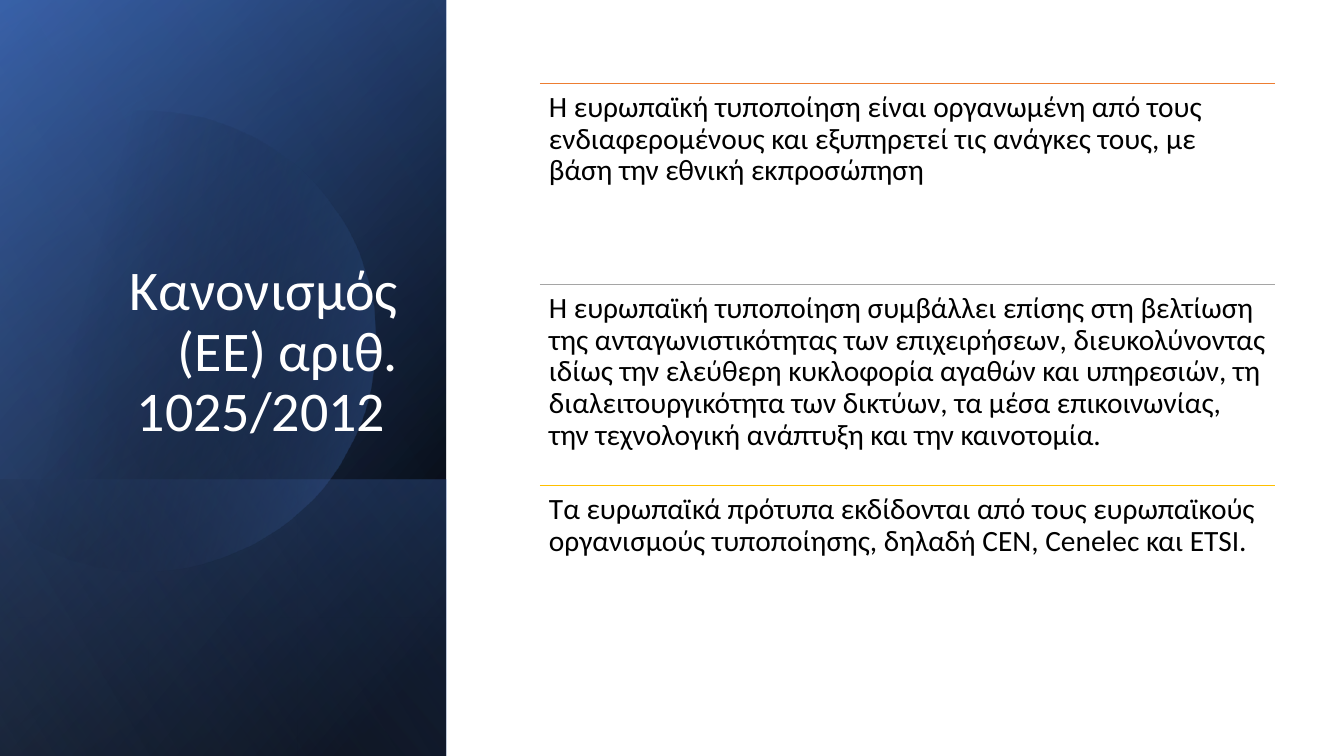
from lxml import etree
from pptx import Presentation
from pptx import util as u
from pptx.dml.color import RGBColor
from pptx.enum import shapes, text
from pptx.oxml.ns import qn

SCALE = 914400 / 100.8  # EMU in one px
WIDE, HIGH, SIDE = 1344, 756, 446

# Each stop: position %, colour, opacity %
PANELS = [
    (0, HIGH, 50, [(8, "000000", 100), (100, "2F5597", 100)]),
    (0, HIGH, 30, [(0, "000000", 0), (99, "4472C4", 46)]),
    (480, HIGH - 480, 130, [(2, "4472C4", 29), (100, "000000", 30)]),
]
SHEEN = (0, HIGH, 120, [(0, "000000", 0), (99, "8FAADC", 11)])
DISC = [(29, "000000", 0), (100, "4472C4", 43)]

# Disc outline: cubic curves, each from the end of the one before
START = (150, 111)
RIGHT = [
    [(248, 113), (338, 178), (366, 277)],
    [(401, 400), (331, 527), (209, 562)],
    [(132, 585), (53, 566), (-3, 518)],
]
EDGE = [(-15, 507), (-15, 176), (0, 162)]
LEFT = [
    [(23, 143), (50, 129), (81, 120)],
    [(104, 114), (127, 111), START],
]

TITLE = "Κανονισμός (ΕΕ) αριθ. 1025/2012 "
ROWS = [
    ("ED7D31", "Η ευρωπαϊκή τυποποίηση είναι οργανωμένη από τους "
     "ενδιαφερομένους και εξυπηρετεί τις ανάγκες τους, με βάση την εθνική "
     "εκπροσώπηση"),
    ("A5A5A5", "Η ευρωπαϊκή τυποποίηση συμβάλλει επίσης στη βελτίωση της "
     "ανταγωνιστικότητας των επιχειρήσεων, διευκολύνοντας ιδίως την ελεύθερη "
     "κυκλοφορία αγαθών και υπηρεσιών, τη διαλειτουργικότητα των δικτύων, τα "
     "μέσα επικοινωνίας, την τεχνολογική ανάπτυξη και την καινοτομία."),
    ("FFC000", "Τα ευρωπαϊκά πρότυπα εκδίδονται από τους ευρωπαϊκούς "
     "οργανισμούς τυποποίησης, δηλαδή CEN, Cenelec και ETSI."),
]


def px(n):
    return u.Emu(round(n * SCALE))


def color(code):
    return RGBColor.from_string(code)


def shade(shape, stops, angle):
    """Give a shape a linear gradient, with opacity, and no line."""
    shape.shadow.inherit = False
    shape.line.fill.background()
    shape.fill.gradient()
    grad = shape._element.spPr.find(qn("a:gradFill"))
    for child in list(grad):
        grad.remove(child)
    grad.set("rotWithShape", "1")
    group = etree.SubElement(grad, qn("a:gsLst"))
    for pos, code, alpha in stops:
        stop = etree.SubElement(group, qn("a:gs"), pos=str(pos * 1000))
        tint = etree.SubElement(stop, qn("a:srgbClr"), val=code)
        etree.SubElement(tint, qn("a:alpha"), val=str(alpha * 1000))
    etree.SubElement(grad, qn("a:lin"), ang=str(angle * 60000), scaled="0")


def panel(slide, top, high, angle, stops):
    """Add a side panel, turned a quarter and mirrored."""
    left = (SIDE - high) / 2
    mid = top + (high - SIDE) / 2
    shape = slide.shapes.add_shape(shapes.MSO_SHAPE.RECTANGLE, px(left),
                                   px(mid), px(high), px(SIDE))
    shape.rotation = 90
    shape._element.spPr.find(qn("a:xfrm")).set("flipH", "1")
    shade(shape, stops, angle)


def curve(start, parts, steps=24):
    """Return points along a chain of cubic curves."""
    dots = []
    for one, two, end in parts:
        for i in range(1, steps + 1):
            t = i / steps
            s = 1 - t
            dots.append(tuple(
                s**3 * a + 3 * s * s * t * b + 3 * s * t * t * c + t**3 * d
                for a, b, c, d in zip(start, one, two, end)))
        start = end
    return dots


def disc(slide):
    dots = curve(START, RIGHT) + EDGE + curve(EDGE[-1], LEFT)
    form = slide.shapes.build_freeform(*START, scale=SCALE)
    form.add_line_segments(dots, close=True)
    shade(form.convert_to_shape(), DISC, 14)


def label(slide, box, words, size, code, inset):
    frame = slide.shapes.add_textbox(*map(px, box)).text_frame
    frame.word_wrap = True
    frame.margin_left = frame.margin_right = px(inset[0])
    frame.margin_top = frame.margin_bottom = px(inset[1])
    para = frame.paragraphs[0]
    para.text = words
    para.line_spacing = 0.9
    para.font.name = "Calibri"
    para.font.size = u.Pt(size)
    para.font.color.rgb = color(code)
    return frame


def rule(slide, left, top, wide, code):
    line = slide.shapes.add_connector(shapes.MSO_CONNECTOR.STRAIGHT, px(left),
                                      px(top), px(left + wide), px(top))
    line.line.color.rgb = color(code)
    line.line.width = u.Pt(0.5)
    etree.SubElement(line._element.spPr, qn("a:effectLst"))


def main():
    deck = Presentation()
    deck.slide_width, deck.slide_height = px(WIDE), px(HIGH)
    slide = deck.slides.add_slide(deck.slide_layouts[6])

    # Side panel
    for part in PANELS:
        panel(slide, *part)
    disc(slide)
    panel(slide, *SHEEN)

    # Title
    frame = label(slide, (64, 185, 344, 264), TITLE, 40, "FFFFFF", (10, 5))
    frame.vertical_anchor = text.MSO_ANCHOR.BOTTOM
    frame.paragraphs[0].alignment = text.PP_ALIGN.RIGHT

    # Ruled statements
    left, wide, step = 540, 735, 201
    for i, (code, words) in enumerate(ROWS):
        top = 83 + i * step
        rule(slide, left, top, wide, code)
        label(slide, (left, top, wide, step), words, 21, "000000", (9, 9))

    deck.save("out.pptx")


if __name__ == "__main__":
    main()
